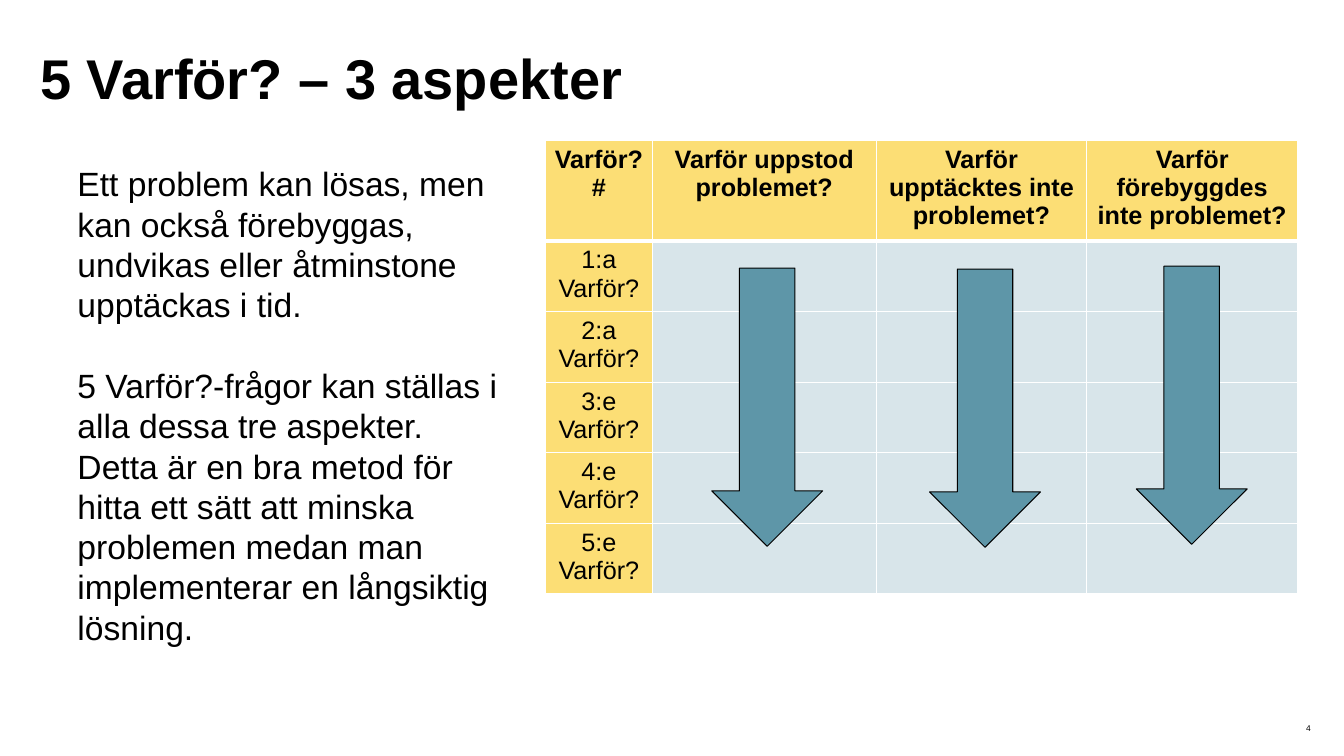
import lxml.etree
import pptx
import pptx.dml.color
import pptx.enum.shapes
import pptx.enum.text
import pptx.oxml
import pptx.oxml.ns
import pptx.util

Inches, Pt = pptx.util.Inches, pptx.util.Pt
ALIGN = pptx.enum.text.PP_ALIGN
ANCHOR = pptx.enum.text.MSO_ANCHOR


def color(hex_value):
    return pptx.dml.color.RGBColor.from_string(hex_value)


class Deck:
    """Hold the style and the current slide, and add each kind of element."""

    FONT, INK, WHITE = "Arial", "000000", "FFFFFF"
    YELLOW, PALE, TEAL = "FAC81A", "BFD5DC", "5E96A8"

    def __init__(self):
        self.presentation = pptx.Presentation()
        self.presentation.slide_width = Inches(13.33)
        self.presentation.slide_height = Inches(7.5)
        self.slide = self.presentation.slides.add_slide(self.presentation.slide_layouts[5])

    def set_text(self, frame, text, size, bold=False, align=ALIGN.LEFT):
        frame.text = text
        frame.word_wrap = True
        for paragraph in frame.paragraphs:
            paragraph.alignment = align
            for run in paragraph.runs:
                run.font.name = self.FONT
                run.font.size = Pt(size)
                run.font.bold = bold
                run.font.color.rgb = color(self.INK)

    def title(self, text, left, top, width, height):
        heading = self.slide.shapes.title
        heading.left, heading.top = Inches(left), Inches(top)
        heading.width, heading.height = Inches(width), Inches(height)
        frame = heading.text_frame
        self.set_text(frame, text, 40, bold=True)
        frame.auto_size = pptx.enum.text.MSO_AUTO_SIZE.NONE
        frame.vertical_anchor = ANCHOR.TOP
        frame.margin_top = Inches(0.12)

    def text(self, text, left, top, width, height, size, align=ALIGN.LEFT):
        box = self.slide.shapes.add_textbox(Inches(left), Inches(top), Inches(width), Inches(height))
        self.set_text(box.text_frame, text, size, align=align)
        return box.text_frame

    def border(self, cell, sides):
        properties = cell._tc.get_or_add_tcPr()
        for index, (side, points) in enumerate(sides.items()):
            line = pptx.oxml.parse_xml(
                f'<a:ln{side} {pptx.oxml.ns.nsdecls("a")} w="{Pt(points)}"><a:solidFill>'
                f'<a:srgbClr val="{self.WHITE}"/></a:solidFill></a:ln{side}>')
            properties.insert(index, line)

    def fill_cell(self, cell, hex_value, opacity):
        cell.fill.solid()
        cell.fill.fore_color.rgb = color(hex_value)
        tint = cell._tc.tcPr.find(".//" + pptx.oxml.ns.qn("a:srgbClr"))
        lxml.etree.SubElement(tint, pptx.oxml.ns.qn("a:alpha"), val=str(opacity * 1000))

    def table(self, rows, left, top, widths, heights):
        frame = self.slide.shapes.add_table(
            len(rows), len(widths), Inches(left), Inches(top),
            Inches(sum(widths)), Inches(sum(heights)))
        grid = frame.table
        grid.horz_banding = False
        for column, width in zip(grid.columns, widths):
            column.width = Inches(width)
        for row, height in zip(grid.rows, heights):
            row.height = Inches(height)
        for r, labels in enumerate(rows):
            for c, label in enumerate(labels):
                cell = grid.cell(r, c)
                cell.margin_left = cell.margin_right = Inches(0.08)
                self.set_text(cell.text_frame, label, 18, bold=r == 0, align=ALIGN.CENTER)
                self.fill_cell(cell, self.YELLOW if r == 0 or c == 0 else self.PALE, 60)
                self.border(cell, {"L": 1, "R": 1, "T": 3 if r == 1 else 1, "B": 3 if r == 0 else 1})

    def down_arrow(self, left, top, width, height):
        arrow = self.slide.shapes.add_shape(
            pptx.enum.shapes.MSO_SHAPE.DOWN_ARROW,
            Inches(left), Inches(top), Inches(width), Inches(height))
        arrow.shadow.inherit = False
        arrow.fill.solid()
        arrow.fill.fore_color.rgb = color(self.TEAL)
        arrow.line.color.rgb = color(self.INK)
        arrow.line.width = Pt(0.75)


def main():
    deck = Deck()
    deck.title("5 Varför? – 3 aspekter", 0.3, 0.31, 12.67, 0.92)

    page_number = deck.text("4", 12.33, 7.17, 0.67, 0.1, 6, ALIGN.RIGHT)
    page_number.margin_left = page_number.margin_right = 0
    page_number.margin_top = page_number.margin_bottom = 0

    questions = ["Varför?\n#", "Varför uppstod problemet?",
                 "Varför upptäcktes inte problemet?", "Varför förebyggdes inte problemet?"]
    steps = [[f"{ordinal} Varför?", "", "", ""] for ordinal in ("1:a", "2:a", "3:e", "4:e", "5:e")]
    deck.table([questions] + steps, 5.41, 1.39, [1.06, 2.22, 2.09, 2.09], [0.95] + [0.7] * 5)

    explanation = deck.text(
        "Ett problem kan lösas, men kan också förebyggas, undvikas eller åtminstone upptäckas i tid.\n"
        "5 Varför?-frågor kan ställas i alla dessa tre aspekter. Detta är en bra metod för hitta ett "
        "sätt att minska problemen medan man implementerar en långsiktig lösning.",
        0.67, 1.57, 4.39, 5.13, 24)
    for paragraph in explanation.paragraphs:
        paragraph.line_spacing = Pt(28.8)
    explanation.paragraphs[1].space_before = Pt(28.8)

    for left, top in ((7.06, 2.66), (9.22, 2.67), (11.27, 2.64)):
        deck.down_arrow(left, top, 1.1, 2.76)

    deck.presentation.save("out.pptx")


if __name__ == "__main__":
    main()
